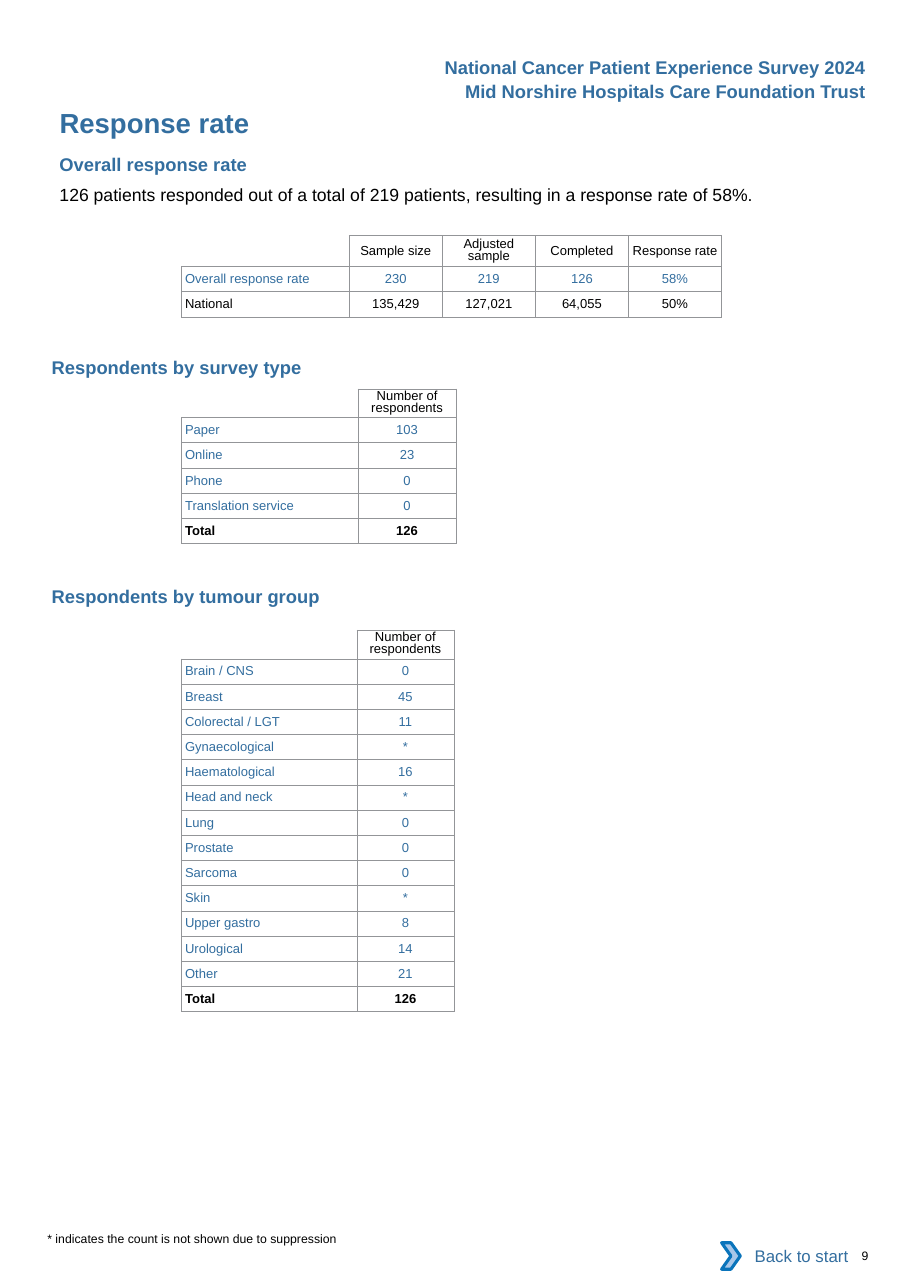
"""Build the response rate page of a patient experience survey report."""
from lxml.etree import SubElement
from pptx import Presentation
from pptx.dml.color import RGBColor
from pptx.enum.shapes import MSO_SHAPE
from pptx.enum.text import MSO_ANCHOR, MSO_AUTO_SIZE, PP_ALIGN
from pptx.oxml.ns import qn
from pptx.util import Inches, Pt

COLOURS = {
    "heading": "336E9F",
    "text": "000000",
    "border": "939598",
    "paper": "FFFFFF",
    "arrow": "A8C7E9",
    "arrow_edge": "0A74BB",
}
FONT = "Arial"
GRID = Inches(0.1)
PAGE_COLUMNS, PAGE_ROWS = 82.6, 116.9
TABLE_LEFT, HEADER_ROW, BODY_ROW = 16.5, 2.6, 2.29
TWO_LINE_HEADERS = {"Adjusted sample", "Number of respondents"}
BLACK_ROWS = {"National", "Total"}

OVERALL = [
    ("", "Sample size", "Adjusted sample", "Completed", "Response rate"),
    ("Overall response rate", "230", "219", "126", "58%"),
    ("National", "135,429", "127,021", "64,055", "50%"),
]
SURVEY_TYPES = [
    ("", "Number of respondents"),
    ("Paper", "103"),
    ("Online", "23"),
    ("Phone", "0"),
    ("Translation service", "0"),
    ("Total", "126"),
]
TUMOUR_GROUPS = [
    ("", "Number of respondents"),
    ("Brain / CNS", "0"),
    ("Breast", "45"),
    ("Colorectal / LGT", "11"),
    ("Gynaecological", "*"),
    ("Haematological", "16"),
    ("Head and neck", "*"),
    ("Lung", "0"),
    ("Prostate", "0"),
    ("Sarcoma", "0"),
    ("Skin", "*"),
    ("Upper gastro", "8"),
    ("Urological", "14"),
    ("Other", "21"),
    ("Total", "126"),
]


def cells(count):
    """Convert a number of grid cells to a length."""
    return int(count * GRID)


def colour(name):
    """Look up a named colour."""
    return RGBColor.from_string(COLOURS[name])


class ReportPage:
    """Hold the style and the current slide."""

    def __init__(self, deck):
        """Add a page with a title."""
        self.page = deck.slides.add_slide(deck.slide_layouts[5])

    def set_text(self, frame, text, size, tone, bold=False, align=PP_ALIGN.LEFT):
        """Put one styled paragraph in a text frame."""
        para = frame.paragraphs[0]
        para.text = text
        para.alignment = align
        para.font.name = FONT
        para.font.size = Pt(size)
        para.font.bold = bold
        para.font.color.rgb = colour(tone)
        return para

    def clear_margins(self, target):
        """Remove the space around the text of a frame or cell."""
        target.margin_left = target.margin_right = 0
        target.margin_top = target.margin_bottom = 0

    def title(self, text, left, top, width, height):
        """Place and format the title."""
        box = self.page.shapes.title
        box.left, box.top = cells(left), cells(top)
        box.width, box.height = cells(width), cells(height)
        frame = box.text_frame
        self.clear_margins(frame)
        frame.vertical_anchor = MSO_ANCHOR.TOP
        frame.auto_size = MSO_AUTO_SIZE.SHAPE_TO_FIT_TEXT
        self.set_text(frame, text, 18, "heading", bold=True)

    def text(self, text, left, top, width, height, size, tone="text", bold=False):
        """Add a text box without margins."""
        box = self.page.shapes.add_textbox(*map(cells, (left, top, width, height)))
        frame = box.text_frame
        frame.word_wrap = True
        frame.auto_size = MSO_AUTO_SIZE.SHAPE_TO_FIT_TEXT
        self.clear_margins(frame)
        self.set_text(frame, text, size, tone, bold)

    def heading(self, text, left, top, width):
        """Add a section heading."""
        self.text(text, left, top, width, 2, 12, "heading", bold=True)

    def banner(self, text, left, top):
        """Add a right-aligned line of the page banner."""
        width = 79.6 - left
        box = self.page.shapes.add_textbox(*map(cells, (left, top, width, 3)))
        frame = box.text_frame
        frame.word_wrap = False
        frame.auto_size = MSO_AUTO_SIZE.SHAPE_TO_FIT_TEXT
        self.set_text(frame, text, 12, "heading", True, PP_ALIGN.RIGHT)

    def border(self, cell, visible):
        """Draw the visible sides of a table cell."""
        properties = cell._tc.get_or_add_tcPr()
        for position, side in enumerate(("lnL", "lnR", "lnT", "lnB")):
            line = properties.makeelement(qn(f"a:{side}"), {"w": str(Pt(0.5))})
            if side in visible:
                fill = SubElement(line, qn("a:solidFill"))
                SubElement(fill, qn("a:srgbClr"), val=COLOURS["border"])
            else:
                SubElement(line, qn("a:noFill"))
            properties.insert(position, line)

    def table(self, records, top, widths, header_row=HEADER_ROW):
        """Add a bordered table with an open top left corner."""
        heights = [header_row] + [BODY_ROW] * (len(records) - 1)
        table = self.page.shapes.add_table(
            len(records), len(widths), cells(TABLE_LEFT), cells(top),
            cells(sum(widths)), cells(sum(heights))).table
        table.first_row = table.horz_banding = False
        for column, width in zip(table.columns, widths):
            column.width = cells(width)
        for row, height in zip(table.rows, heights):
            row.height = cells(height)
        for row_index, record in enumerate(records):
            for column_index, value in enumerate(record):
                self.table_cell(table, row_index, column_index, value, record[0])

    def table_cell(self, table, row_index, column_index, value, label):
        """Fill and format one table cell."""
        cell = table.cell(row_index, column_index)
        self.clear_margins(cell)
        cell.vertical_anchor = MSO_ANCHOR.MIDDLE
        cell.fill.background()
        is_header = row_index == 0
        tone = "text" if is_header or label in BLACK_ROWS else "heading"
        align = PP_ALIGN.CENTER if column_index else PP_ALIGN.LEFT
        para = self.set_text(cell.text_frame, value, 8.5, tone, label == "Total", align)
        if value in TWO_LINE_HEADERS:
            cell.margin_left = cell.margin_right = cells(0.8)
            para.line_spacing = Pt(7.6)
        if column_index == 0:
            cell.margin_left = cells(0.3)
        corner = is_header and column_index == 0
        self.border(cell, {"lnR", "lnB"} if corner else {"lnL", "lnR", "lnT", "lnB"})

    def back_button(self, text):
        """Add the grouped label and chevron of the back button."""
        group = self.page.shapes.add_group_shape()
        label = group.shapes.add_shape(
            MSO_SHAPE.RECTANGLE, *map(cells, (66.2, 111.9, 11.8, 4.2)))
        chevron = group.shapes.add_shape(
            MSO_SHAPE.CHEVRON, *map(cells, (65.5, 112.8, 1.7, 2.4)))
        for shape, tone in ((label, "paper"), (chevron, "arrow")):
            shape.shadow.inherit = False
            shape.fill.solid()
            shape.fill.fore_color.rgb = colour(tone)
        label.line.fill.background()
        label.text_frame.vertical_anchor = MSO_ANCHOR.MIDDLE
        self.set_text(label.text_frame, text, 11, "heading", align=PP_ALIGN.RIGHT)
        chevron.line.color.rgb = colour("arrow_edge")
        chevron.line.width = Pt(2)


def main():
    """Build and save the deck."""
    deck = Presentation()
    deck.slide_width, deck.slide_height = cells(PAGE_COLUMNS), cells(PAGE_ROWS)
    report = ReportPage(deck)
    report.banner("National Cancer Patient Experience Survey 2024", 39.2, 4.6)
    report.banner("Mid Norshire Hospitals Care Foundation Trust", 40.6, 6.8)
    report.title("Response rate", 5.4, 9.6, 41.3, 3)
    report.heading("Overall response rate", 5.4, 13.9, 41.3)
    report.text("126 patients responded out of a total of 219 patients, "
                "resulting in a response rate of 58%.", 5.4, 16.7, 72, 1.9, 11.5)
    report.table(OVERALL, 21.4, [15.2] + [8.45] * 4, header_row=2.8)
    report.heading("Respondents by survey type", 4.7, 32.3, 26)
    report.table(SURVEY_TYPES, 35.3, [16, 8.9])
    report.heading("Respondents by tumour group", 4.7, 53.1, 26)
    report.table(TUMOUR_GROUPS, 57.2, [15.9, 8.8])
    report.text("* indicates the count is not shown due to suppression",
                4.3, 111.8, 28, 1.3, 8)
    report.back_button("Back to start")
    report.text("9", 78.2, 113.3, 4.1, 1.3, 8)
    deck.save("out.pptx")


if __name__ == "__main__":
    main()
